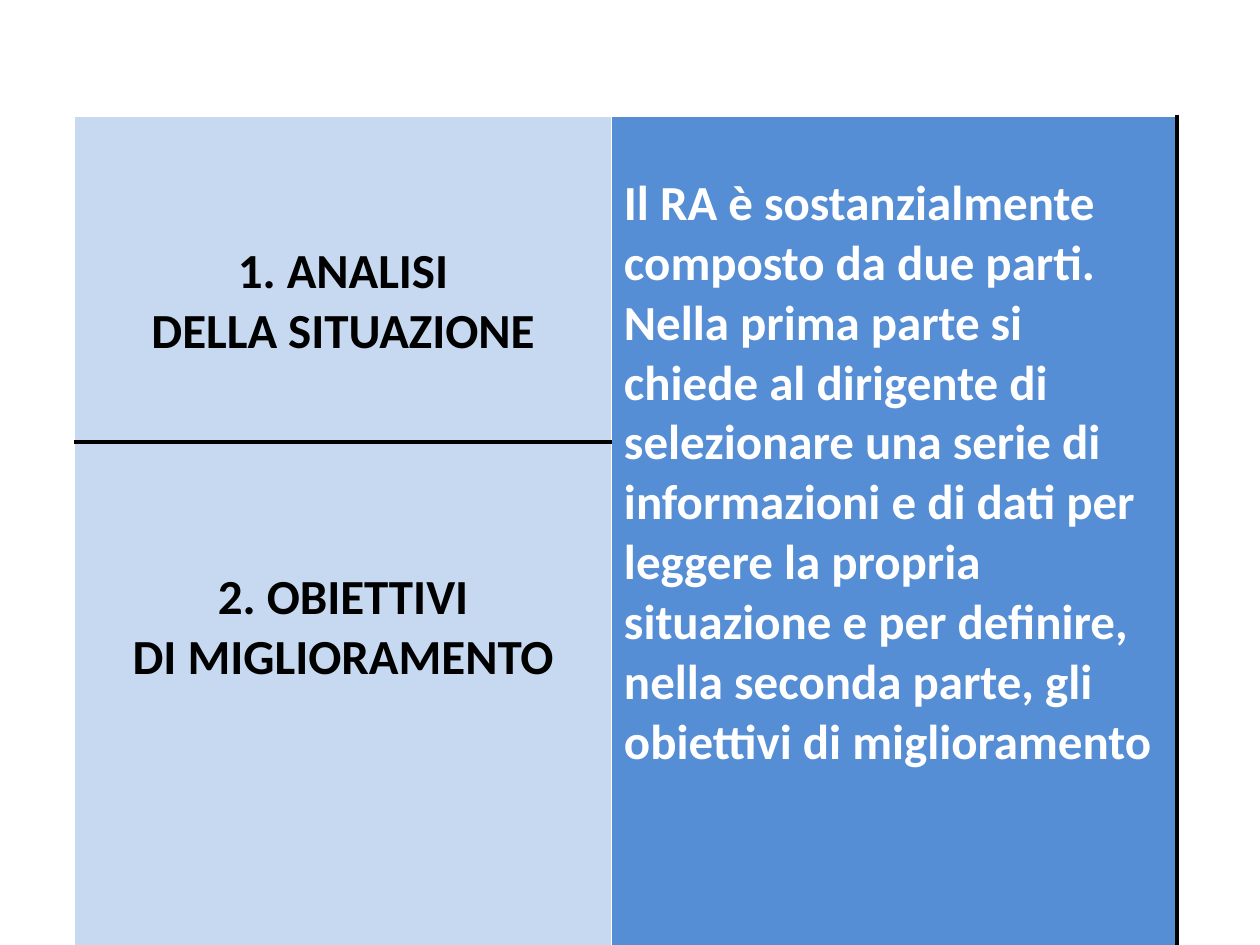
from dataclasses import dataclass

from lxml import etree
from pptx import Presentation
from pptx import util as u
from pptx.dml.color import RGBColor
from pptx.enum import text
from pptx.oxml import ns


@dataclass(frozen=True)
class Theme:
    font: str = "Calibri"
    size: float = 28
    pale: str = "C6D9F1"
    blue: str = "558ED5"
    black: str = "000000"
    white: str = "FFFFFF"
    thin: float = 1
    thick: float = 2.25


class SlideBuilder:
    def __init__(self, slide, theme):
        self.slide = slide
        self.theme = theme

    def table(self, left, top, widths, heights):
        frame = self.slide.shapes.add_table(
            len(heights), len(widths), u.Pt(left), u.Pt(top),
            u.Pt(sum(widths)), u.Pt(sum(heights)))
        table = frame.table
        table.first_row = table.horz_banding = False
        for column, width in zip(table.columns, widths):
            column.width = u.Pt(width)
        for row, height in zip(table.rows, heights):
            row.height = u.Pt(height)
        return table

    def cell(self, cell, fill, borders):
        """Fill a cell and draw its borders, given as side: (colour, width)."""
        cell.fill.solid()
        cell.fill.fore_color.rgb = RGBColor.from_string(fill)
        properties = cell._tc.get_or_add_tcPr()
        sides = [side for side in "LRTB" if side in borders]
        for position, side in enumerate(sides):
            color, width = borders[side]
            line = etree.Element(ns.qn(f"a:ln{side}"), w=str(u.Pt(width)))
            solid = etree.SubElement(line, ns.qn("a:solidFill"))
            etree.SubElement(solid, ns.qn("a:srgbClr"), val=color)
            properties.insert(position, line)

    def cell_text(self, cell, lines, color, margin_top, align):
        cell.margin_top = u.Pt(margin_top)
        frame = cell.text_frame
        for index, line in enumerate(lines):
            paragraph = frame.add_paragraph() if index else frame.paragraphs[0]
            paragraph.alignment = align
            run = paragraph.add_run()
            run.text = line
            run.font.name = self.theme.font
            run.font.size = u.Pt(self.theme.size)
            run.font.bold = True
            run.font.color.rgb = RGBColor.from_string(color)


def main():
    presentation = Presentation()
    presentation.slide_width, presentation.slide_height = u.Pt(720), u.Pt(540)
    theme = Theme()
    slide = presentation.slides.add_slide(presentation.slide_layouts[6])
    builder = SlideBuilder(slide, theme)

    table = builder.table(42.7, 66.3, widths=[306.7, 323.3], heights=[186.2, 287.5])
    white_line = (theme.white, theme.thin)
    black_line = (theme.black, theme.thick)

    parts = [
        (["1. ANALISI", "DELLA SITUAZIONE"], {"T": white_line, "B": black_line}),
        (["2. OBIETTIVI", "DI MIGLIORAMENTO"], {"T": black_line, "B": white_line}),
    ]
    table.cell(0, 1).merge(table.cell(1, 1))
    for row, (lines, borders) in enumerate(parts):
        part = table.cell(row, 0)
        builder.cell(part, theme.pale, {"L": white_line, "R": white_line, **borders})
        builder.cell_text(part, lines, theme.black, 72, text.PP_ALIGN.CENTER)
        builder.cell(table.cell(row, 1), theme.blue,
                     {"L": white_line, "R": black_line, "T": white_line})

    description = (
        "Il RA è sostanzialmente composto da due parti. Nella prima parte si "
        "chiede al dirigente di selezionare una serie di informazioni e di dati "
        "per leggere la propria situazione e per definire, nella seconda parte, "
        "gli obiettivi di miglioramento")
    builder.cell_text(table.cell(0, 1), [description], theme.white, 33,
                      text.PP_ALIGN.LEFT)

    presentation.save("out.pptx")


if __name__ == "__main__":
    main()
